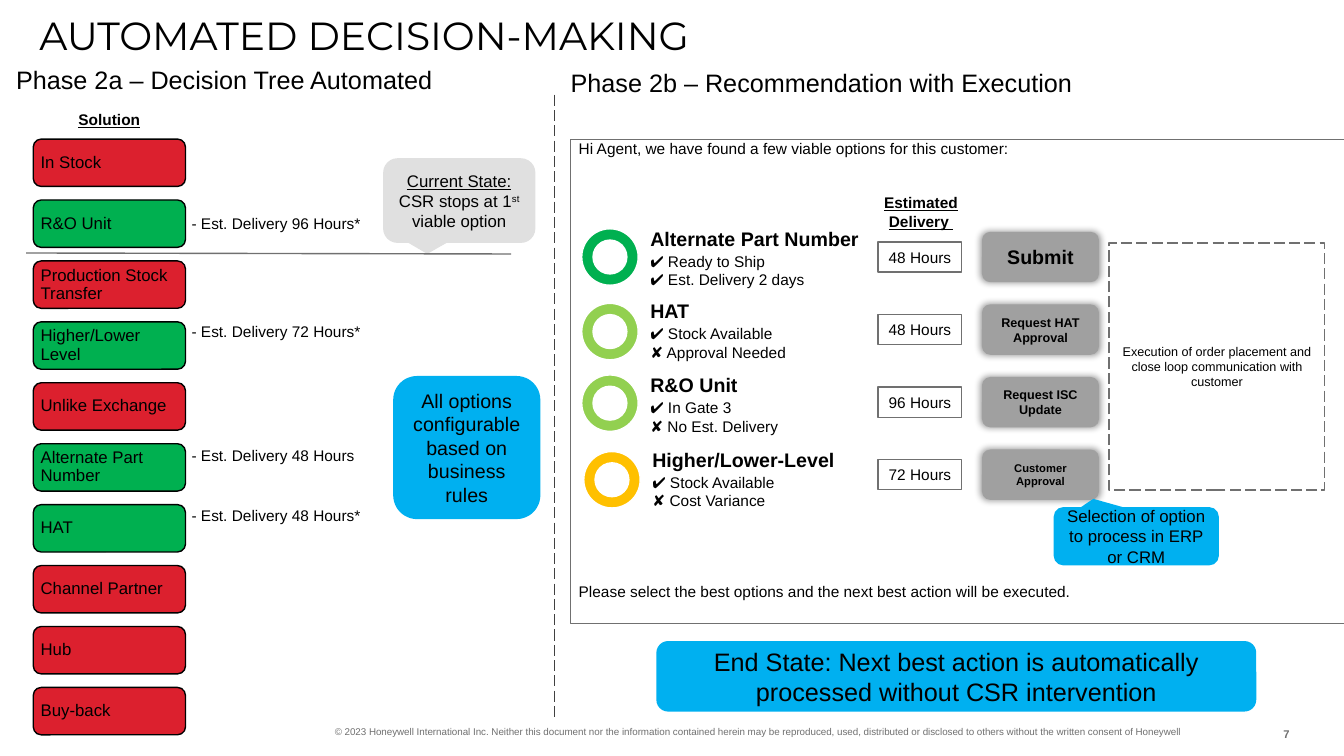
import pptx
import pptx.util
import pptx.dml.color
import pptx.enum.dml
import pptx.enum.shapes
import pptx.enum.text
import pptx.oxml
import lxml.etree

SHAPE = pptx.enum.shapes.MSO_SHAPE
ALIGN = pptx.enum.text.PP_ALIGN
ANCHOR = pptx.enum.text.MSO_ANCHOR
LONG_DASH = pptx.enum.dml.MSO_LINE.LONG_DASH
INCH = pptx.util.Inches
A_NS = "http://schemas.openxmlformats.org/drawingml/2006/main"

BLACK, WHITE, GREY = "000000", "FFFFFF", "707070"
RED, GREEN, LIME, AMBER, BLUE = "DC202E", "00B050", "92D050", "FFC000", "00B0F0"

# solution, fill, delivery note, drop of the note below the step's top
STEPS = [
    ("In Stock", RED, None, 0),
    ("R&O Unit", GREEN, "- Est. Delivery 96 Hours*", 0.14),
    ("Production Stock Transfer", RED, None, 0),
    ("Higher/Lower Level", GREEN, "- Est. Delivery 72 Hours*", 0),
    ("Unlike Exchange", RED, None, 0),
    ("Alternate Part Number", GREEN, "- Est. Delivery 48 Hours", 0.02),
    ("HAT", GREEN, "- Est. Delivery 48 Hours*", 0.01),
    ("Channel Partner", RED, None, 0),
    ("Hub", RED, None, 0),
    ("Buy-back", RED, None, 0),
]
# name, checks, ring colour, (indent, name top, ring top), hours, button, button size
OPTIONS = [
    ("Alternate Part Number", ["✔ Ready to Ship", "✔ Est. Delivery 2 days"],
     GREEN, (0, 2.25, 2.27), "48 Hours", "Submit", 14),
    ("HAT", ["✔ Stock Available", "✘ Approval Needed"],
     LIME, (0, 2.97, 3.01), "48 Hours", "Request HAT Approval", 9),
    ("R&O Unit", ["✔ In Gate 3", "✘ No Est. Delivery"],
     LIME, (0, 3.7, 3.72), "96 Hours", "Request ISC Update", 9),
    ("Higher/Lower-Level", ["✔ Stock Available", "✘ Cost Variance"],
     AMBER, (0.02, 4.44, 4.48), "72 Hours", "Customer Approval", 8),
]
PANEL_TEXT = ["Hi Agent, we have found a few viable options for this customer:",
              "Please select the best options and the next best action will be executed."]
CURRENT_STATE = [[("Current State:", {"underline": True})],
                 [("CSR stops at 1", {}), ("st", {"raised": True}), (" viable option", {})]]
COPYRIGHT = ("© 2023 Honeywell International Inc. Neither this document nor the information "
             "contained herein may be reproduced, used, distributed or disclosed to others "
             "without the written consent of Honeywell")
STEP_TOP, STEP_PITCH = 1.38, (6.82 - 1.38) / 9
OPTION_PITCH = 0.72

prs = pptx.Presentation()
prs.slide_width, prs.slide_height = INCH(13.33), INCH(7.5)
s = prs.slides.add_slide(prs.slide_layouts[6])


def rgb(value):
    return pptx.dml.color.RGBColor.from_string(value)


def write(sp, paragraphs, size=11, font="Arial", color=BLACK, bold=False, underline=False,
          align=ALIGN.LEFT, anchor=ANCHOR.TOP, insets=(0, 0, 0, 0), wrap=True,
          spacing=None, gap=0):
    """Fill a shape; each paragraph is a string or a list of (text, run format)."""
    tf = sp.text_frame
    tf.word_wrap, tf.vertical_anchor = wrap, anchor
    tf.margin_left, tf.margin_top, tf.margin_right, tf.margin_bottom = map(INCH, insets)
    if isinstance(paragraphs, str):
        paragraphs = [paragraphs]
    for i, runs in enumerate(paragraphs):
        p = tf.paragraphs[0] if i == 0 else tf.add_paragraph()
        p.alignment = align
        if spacing:
            p.line_spacing = spacing
        if i and gap:
            p.space_before = pptx.util.Pt(gap)
        for text, style in [(runs, {})] if isinstance(runs, str) else runs:
            r = p.add_run()
            r.text = text
            r.font.name, r.font.size = font, pptx.util.Pt(size)
            r.font.bold, r.font.underline = bold, style.get("underline", underline)
            r.font.color.rgb = rgb(color)
            if style.get("raised"):
                r.font._element.set("baseline", "30000")
    return sp


def label(box, paragraphs, **fmt):
    return write(s.shapes.add_textbox(*map(INCH, box)), paragraphs, **fmt)


def style_line(line, color, width, dash):
    line.color.rgb, line.width = rgb(color), pptx.util.Pt(width)
    if dash:
        line.dash_style = dash


def shape(kind, box, fill=None, line=None, width=1, dash=None, adjust=()):
    sp = s.shapes.add_shape(kind, *map(INCH, box))
    sp.shadow.inherit = False
    if fill:
        sp.fill.solid()
        sp.fill.fore_color.rgb = rgb(fill)
    else:
        sp.fill.background()
    if line:
        style_line(sp.line, line, width, dash)
    else:
        sp.line.fill.background()
    for i, value in enumerate(adjust):
        sp.adjustments[i] = value
    return sp


def centred(sp, paragraphs, **fmt):
    return write(sp, paragraphs, align=ALIGN.CENTER, anchor=ANCHOR.MIDDLE,
                 insets=(0.1, 0.05, 0.1, 0.05), **fmt)


def rule(x1, y1, x2, y2, color, dash=None):
    c = s.shapes.add_connector(pptx.enum.shapes.MSO_CONNECTOR.STRAIGHT,
                               *map(INCH, (x1, y1, x2, y2)))
    style_line(c.line, color, 1, dash)
    lxml.etree.SubElement(c._element.spPr, f"{{{A_NS}}}effectLst")


def soft_shadow(sp):
    effects = sp._element.spPr.find(f"{{{A_NS}}}effectLst")
    effects.append(pptx.oxml.parse_xml(
        f'<a:outerShdw xmlns:a="{A_NS}" blurRad="63500" sx="102000" sy="102000" algn="ctr" '
        'rotWithShape="0"><a:srgbClr val="000000"><a:alpha val="40000"/></a:srgbClr>'
        '</a:outerShdw>'))


# Frame of the slide
label((3.21, 7.08, 8.5, 0.24), COPYRIGHT, size=7, color=GREY, align=ALIGN.RIGHT,
      anchor=ANCHOR.BOTTOM, wrap=False)
label((12.25, 7.09, 0.54, 0.26), "7", size=8, color=GREY, bold=True, align=ALIGN.RIGHT,
      anchor=ANCHOR.BOTTOM)
label((0.39, 0.17, 12.52, 0.44), "AUTOMATED DECISION-MAKING", size=28, font="Montserrat",
      spacing=0.9)
label((0.16, 0.64, 4.6, 0.3), "Phase 2a – Decision Tree Automated", size=18)
label((5.66, 0.67, 6.5, 0.3), "Phase 2b – Recommendation with Execution", size=18)
rule(5.5, 0.94, 5.5, 7.12, "404040", LONG_DASH)

# Phase 2a
label((0.4, 1.09, 1.37, 0.19), "Solution", bold=True, underline=True, align=ALIGN.CENTER)
for i, (solution, fill, note, drop) in enumerate(STEPS):
    top = STEP_TOP + i * STEP_PITCH
    write(shape(SHAPE.ROUNDED_RECTANGLE, (0.33, top, 1.51, 0.47), fill, BLACK), solution,
          size=12, anchor=ANCHOR.MIDDLE, insets=(0.05,) * 4, spacing=0.9)
    if note:
        label((1.9, top + drop, 1.92, 0.19), note)
centred(shape(SHAPE.ROUNDED_RECTANGULAR_CALLOUT, (3.8, 1.57, 1.51, 0.84), "E0E0E0",
              adjust=(-0.21, 0.63, 0.17)), CURRENT_STATE, size=12)
rule(0.26, 2.51, 5.07, 2.52, GREY)
centred(shape(SHAPE.ROUNDED_RECTANGLE, (3.9, 3.73, 1.46, 1.42), BLUE),
        "All options configurable based on business rules", size=14)

# Phase 2b
write(shape(SHAPE.RECTANGLE, (5.66, 1.38, 7.68, 4.81), line=GREY, width=0.75), PANEL_TEXT,
      insets=(0.08, 0, 0, 0), gap=303)
label((8.76, 1.92, 0.75, 0.37), ["Estimated", "Delivery "], bold=True, underline=True,
      align=ALIGN.CENTER)
for i, (name, checks, color, place, hours, action, size) in enumerate(OPTIONS):
    indent, name_top, ring_top = place
    offset = i * OPTION_PITCH
    shape(SHAPE.DONUT, (5.77 + indent, ring_top, 0.56, 0.56), color, WHITE, adjust=(0.2,))
    label((6.45 + indent, name_top, 2.24, 0.24), name, size=14, bold=True)
    label((6.45 + indent, name_top + 0.25, 1.64, 0.37), checks)
    centred(shape(SHAPE.RECTANGLE, (8.71, 2.4 + offset, 0.83, 0.3), line=GREY), hours)
    button = shape(SHAPE.ROUNDED_RECTANGLE, (9.74, 2.3 + offset, 1.16, 0.5), "A0A0A0")
    soft_shadow(button)
    centred(button, action, size=size, bold=True)
centred(shape(SHAPE.ROUNDED_RECTANGLE, (6.51, 6.36, 5.95, 0.7), BLUE),
        "End State: Next best action is automatically processed without CSR intervention",
        size=18)
centred(shape(SHAPE.ROUNDED_RECTANGULAR_CALLOUT, (10.45, 5.03, 1.64, 0.58), BLUE,
              adjust=(-0.26, -0.64, 0.17)),
        "Selection of option to process in ERP or CRM", size=12)
centred(shape(SHAPE.RECTANGLE, (11, 2.41, 2.14, 2.45), line=GREY, dash=LONG_DASH),
        "Execution of order placement and close loop communication with customer", size=9)

prs.save("out.pptx")
